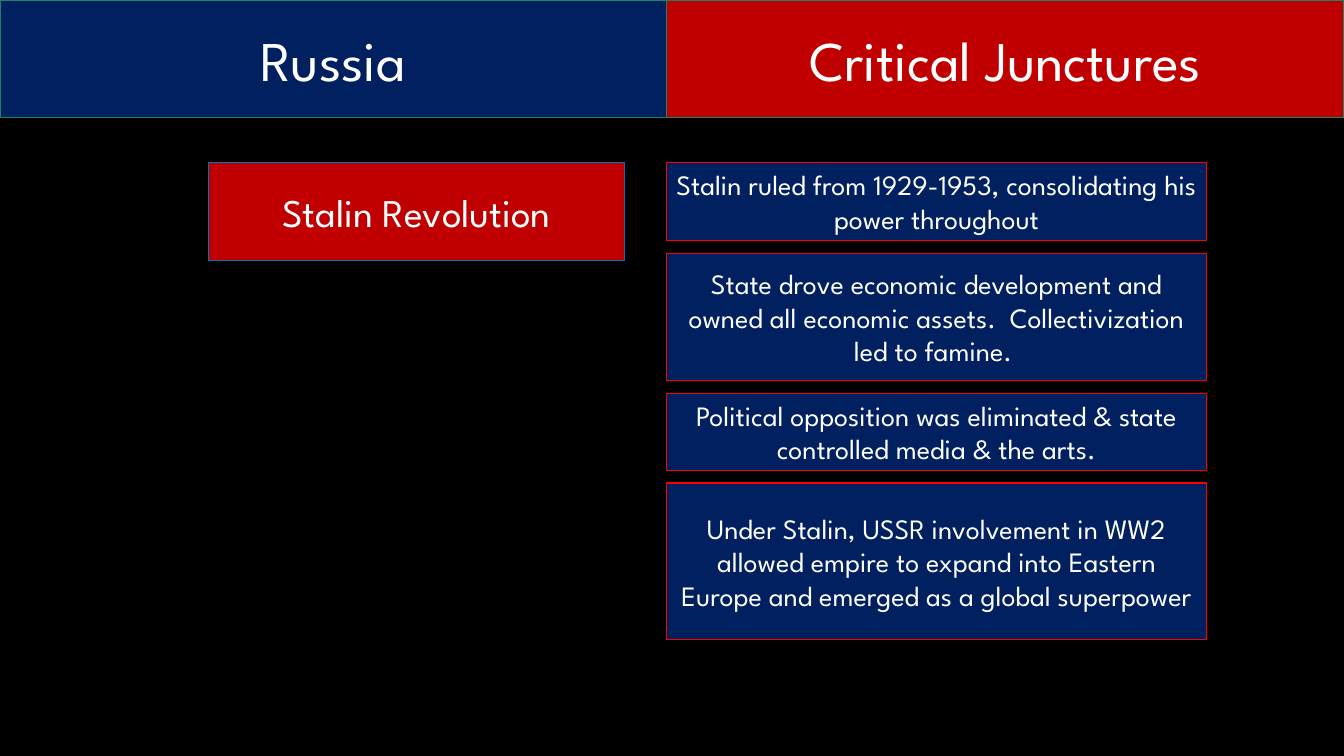
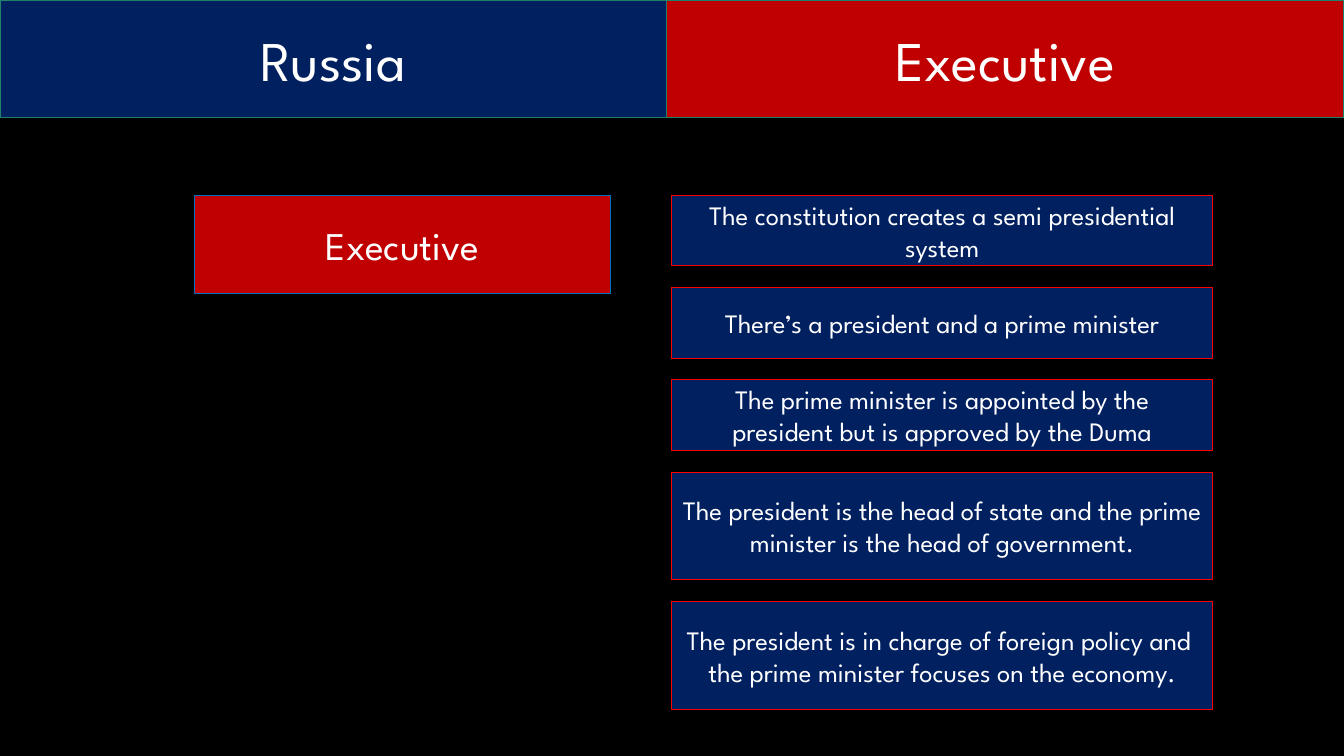
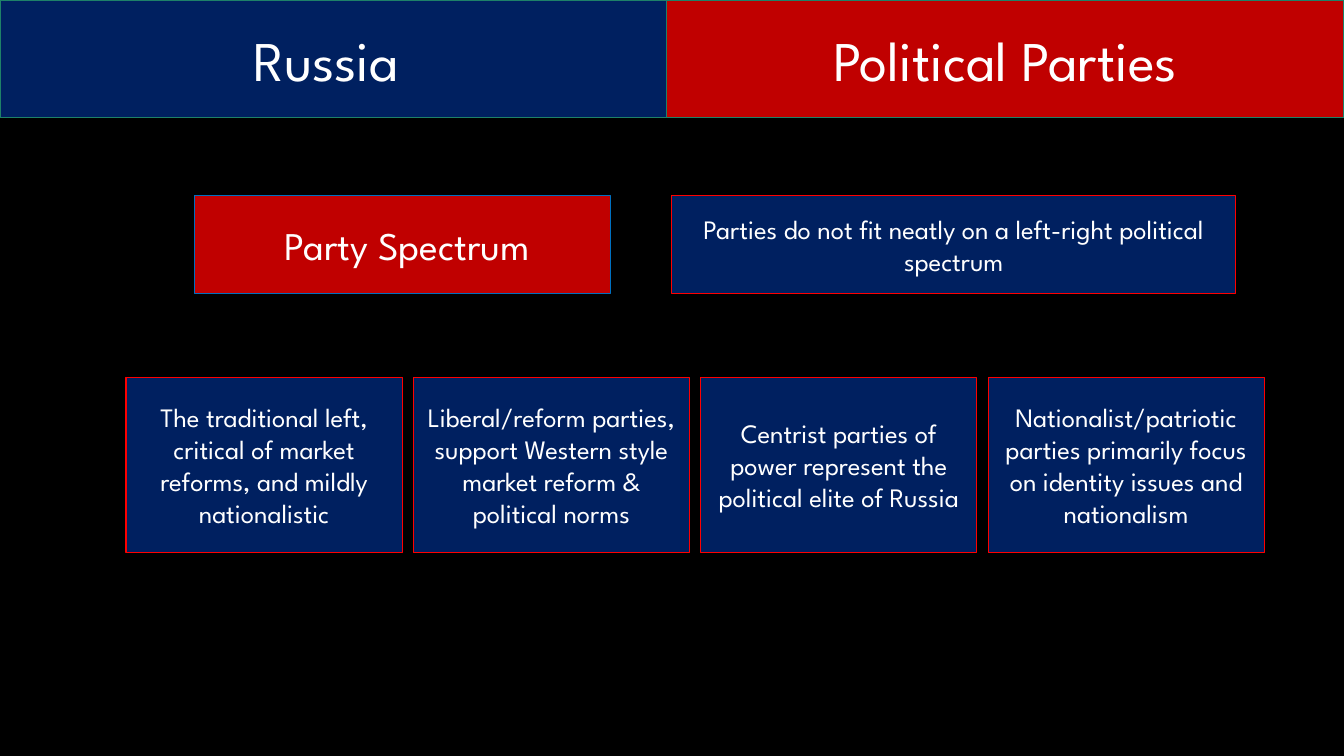
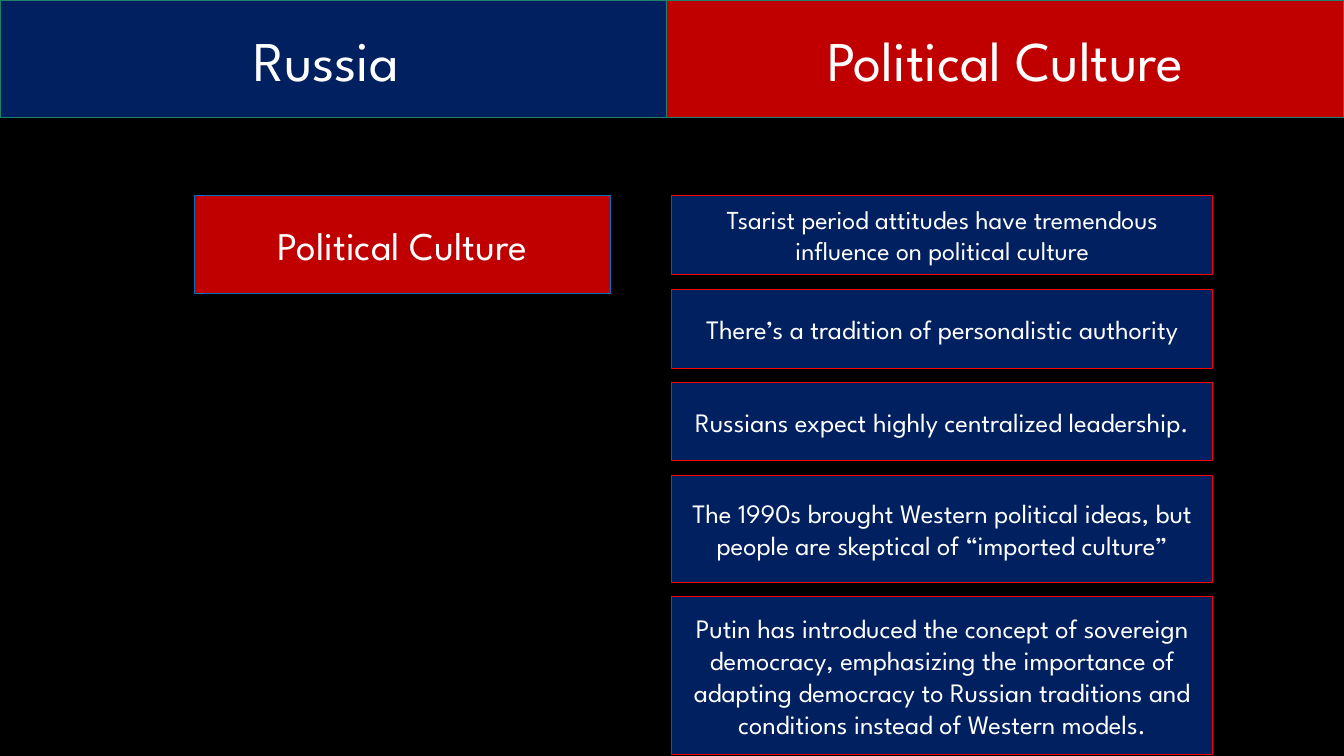
import pptx
import pptx.util
import pptx.dml.color
import pptx.enum.shapes
import pptx.enum.text

Pt = pptx.util.Pt
RGB = pptx.dml.color.RGBColor

BLACK = RGB(0x00, 0x00, 0x00)
WHITE = RGB(0xFF, 0xFF, 0xFF)
NAVY = RGB(0x00, 0x20, 0x60)
RED = RGB(0xC0, 0x00, 0x00)
BRIGHT = RGB(0xFF, 0x00, 0x00)
BLUE = RGB(0x00, 0x70, 0xC0)
GREEN = RGB(0x1E, 0x81, 0x68)

FONT = "League Spartan"
WIDE, HIGH = 960, 540
SPLIT, BAND = 476, 84
TOP = 139.6
TAG = (139, TOP, 297, 70)


def style(shape, text, size, fill, edge, weight):
    shape.fill.solid()
    shape.fill.fore_color.rgb = fill
    shape.line.color.rgb = edge
    shape.line.width = Pt(weight)
    frame = shape.text_frame
    frame.word_wrap = True
    frame.auto_size = pptx.enum.text.MSO_AUTO_SIZE.NONE
    frame.vertical_anchor = pptx.enum.text.MSO_ANCHOR.MIDDLE
    para = frame.paragraphs[0]
    para.alignment = pptx.enum.text.PP_ALIGN.CENTER
    run = para.add_run()
    run.text = text
    run.font.name = FONT
    run.font.size = Pt(size)
    run.font.color.rgb = WHITE


def panel(slide, box, text, size, fill, edge, weight):
    shape = slide.shapes.add_shape(
        pptx.enum.shapes.MSO_SHAPE.RECTANGLE, *map(Pt, box))
    shape.shadow.inherit = False
    style(shape, text, size, fill, edge, weight)


def header(slide, nation, topic):
    panel(slide, (0, 0, SPLIT, BAND), nation, 40, NAVY, GREEN, 1)
    title = slide.shapes.title
    title.left, title.top = Pt(SPLIT), Pt(0)
    title.width, title.height = Pt(WIDE - SPLIT), Pt(BAND)
    style(title, topic, 40, RED, GREEN, 1)


def tag(slide, box, text):
    panel(slide, box, text, 28, RED, BLUE, 1)


def card(slide, box, text, size=19):
    panel(slide, box, text, size, NAVY, BRIGHT, 0.75)


def stack(slide, left, top, width, gap, rows):
    for text, high, size in rows:
        card(slide, (left, top, width, high), text, size)
        top += high + gap


def strip(slide, box, gap, texts):
    left, top, width, high = box
    each = (width - gap * (len(texts) - 1)) / len(texts)
    for i, text in enumerate(texts):
        card(slide, (left + i * (each + gap), top, each, high), text)


def start(deck, nation, topic):
    slide = deck.slides.add_slide(deck.slide_layouts[5])
    header(slide, nation, topic)
    return slide


def stalin(deck):
    slide = start(deck, "Russia", "Critical Junctures")
    tag(slide, (149, 116, 297, 70), "Stalin Revolution")
    stack(slide, SPLIT, 116, 386, 9, [
        ("Stalin ruled from 1929-1953, consolidating his power throughout",
         56, 20),
        ("State drove economic development and owned all economic assets.  "
         "Collectivization led to famine. ", 91, 20),
        ("Political opposition was eliminated & state controlled media & "
         "the arts.", 55, 20),
        ("Under Stalin, USSR involvement in WW2 allowed empire to expand "
         "into Eastern Europe and emerged as a global superpower", 112, 20),
    ])


def rulers(deck):
    slide = start(deck, "Russia", "Executive")
    tag(slide, TAG, "Executive")
    stack(slide, 480, TOP, 386, 15.5, [
        ("The constitution creates a semi presidential system", 50.4, 19),
        ("There’s a president and a prime minister", 50.4, 19),
        ("The prime minister is appointed by the president but is approved "
         "by the Duma", 50.4, 19),
        ("The president is the head of state and the prime minister is the "
         "head of government.", 77, 19),
        ("The president is in charge of foreign policy and  the prime "
         "minister focuses on the economy.", 77, 19),
    ])


def parties(deck):
    slide = start(deck, "Russia ", "Political Parties")
    tag(slide, TAG, " Party Spectrum")
    card(slide, (480, TOP, 402.5, 70),
         "Parties do not fit neatly on a left-right political spectrum")
    strip(slide, (90, 270, 813, 124.5), 8, [
        "The traditional left, critical of market reforms, and mildly "
        "nationalistic",
        "Liberal/reform parties, support Western style market reform & "
        "political norms",
        "Centrist parties of power represent the political elite of Russia",
        "Nationalist/patriotic parties primarily focus on identity issues "
        "and nationalism",
    ])


def culture(deck):
    slide = start(deck, "Russia ", "Political Culture")
    tag(slide, TAG, "Political Culture")
    stack(slide, 480, TOP, 386, 10.4, [
        ("Tsarist period attitudes have tremendous influence on political "
         "culture", 56.5, 18.5),
        ("There’s a tradition of personalistic authority", 56.5, 19),
        ("Russians expect highly centralized leadership.", 55.5, 19),
        ("The 1990s brought Western political ideas, but people are "
         "skeptical of “imported culture”", 76.5, 19),
        ("Putin has introduced the concept of sovereign democracy, "
         "emphasizing the importance of adapting democracy to Russian "
         "traditions and conditions instead of Western models.", 113, 19),
    ])


def main():
    deck = pptx.Presentation()
    deck.slide_width, deck.slide_height = Pt(WIDE), Pt(HIGH)
    back = deck.slide_master.background.fill
    back.solid()
    back.fore_color.rgb = BLACK
    for build in (stalin, rulers, parties, culture):
        build(deck)
    deck.save("out.pptx")


if __name__ == "__main__":
    main()
